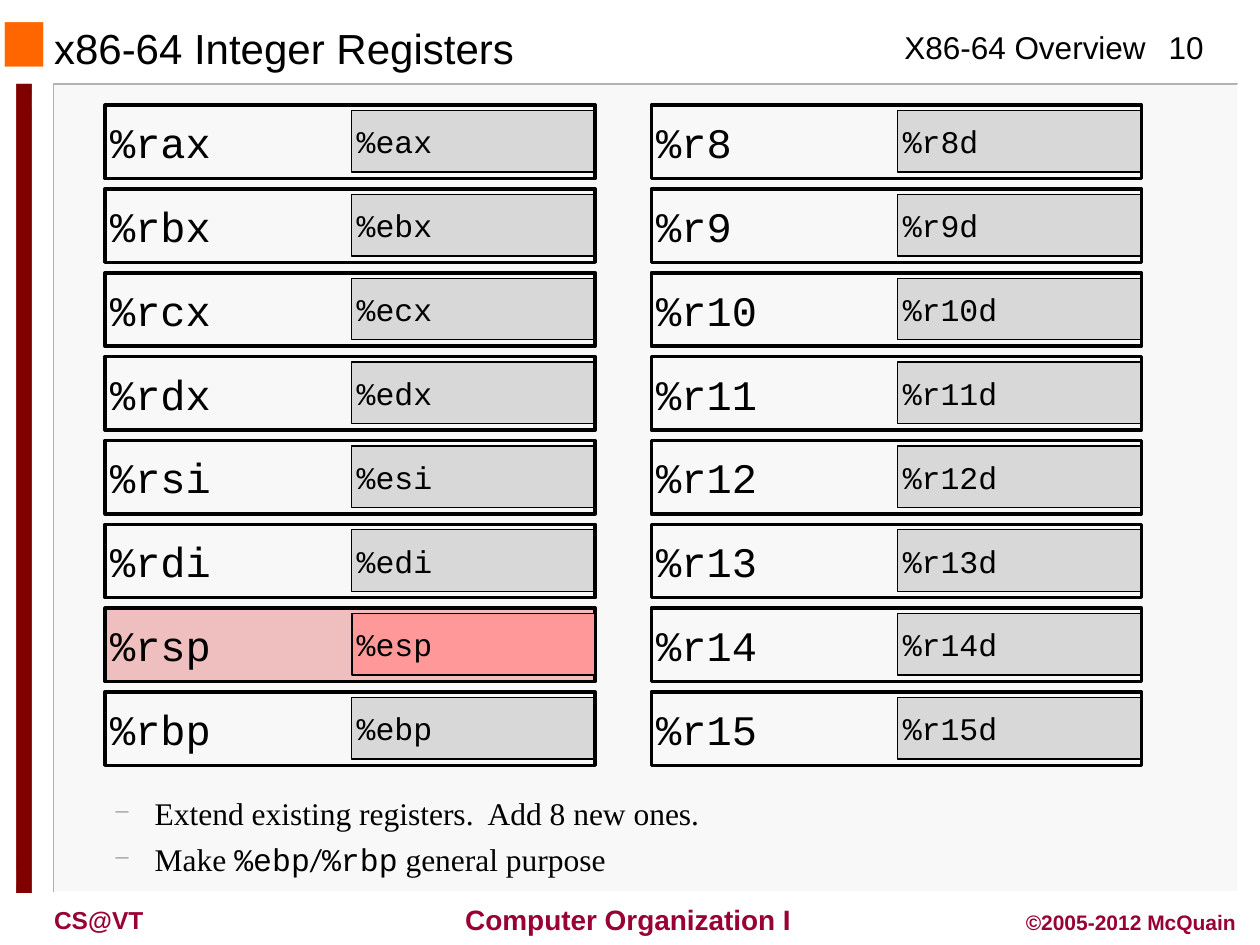
from dataclasses import dataclass

from lxml import etree
from pptx import Presentation
from pptx.dml.color import RGBColor
from pptx.enum.shapes import MSO_SHAPE
from pptx.enum.text import MSO_ANCHOR, PP_ALIGN
from pptx.oxml.ns import qn
from pptx.util import Cm, Pt

RECTANGLE = MSO_SHAPE.RECTANGLE
TOP, MIDDLE = MSO_ANCHOR.TOP, MSO_ANCHOR.MIDDLE
LEFT, CENTER, RIGHT = PP_ALIGN.LEFT, PP_ALIGN.CENTER, PP_ALIGN.RIGHT


@dataclass(frozen=True)
class Theme:
    # Colours
    ink: str = "000000"
    panel: str = "F8F8F8"
    rule: str = "B2B2B2"
    white: str = "FFFFFF"
    orange: str = "FF6600"
    maroon: str = "800000"
    footer: str = "990033"
    half: str = "D8D8D8"
    pointer: str = "EFBFBF"
    pointer_half: str = "FF9999"
    # Fonts
    sans: str = "Arial"
    serif: str = "Times New Roman"
    mono: str = "Courier New"
    slash: str = "Calibri"
    # Type sizes
    large: int = 24
    body: int = 18
    course: int = 16
    school: int = 14
    small: int = 12


THEME = Theme()

# Register grid, in cm
GRID_LEFT, GRID_TOP = 2.12, 2.12
COLUMN_STEP, ROW_STEP = 11.01, 1.69
FULL_SIZE = (9.88, 1.48)
HALF_OFFSET = (4.97, 0.11)
HALF_SIZE = (4.9, 1.24)
STACK_POINTER = "%rsp"
REGISTERS = [
    [("%rax", "%eax"), ("%rbx", "%ebx"), ("%rcx", "%ecx"), ("%rdx", "%edx"),
     ("%rsi", "%esi"), ("%rdi", "%edi"), ("%rsp", "%esp"), ("%rbp", "%ebp")],
    [(f"%r{n}", f"%r{n}d") for n in range(8, 16)],
]


def set_all(target, values):
    for name, value in values.items():
        setattr(target, name, value)


def paint(shape, fill=None, line=None, width=1):
    shape.shadow.inherit = False
    for part, colour in ((shape.fill, fill), (shape.line.fill, line)):
        if colour:
            part.solid()
            part.fore_color.rgb = RGBColor.from_string(colour)
        else:
            part.background()
    if line:
        shape.line.width = Pt(width)


def set_frame(frame, anchor=TOP, wrap=True, inset=(0.25, 0.13)):
    across, down = (Cm(value) for value in inset)
    set_all(frame, {"word_wrap": wrap, "vertical_anchor": anchor,
                    "margin_left": across, "margin_right": across,
                    "margin_top": down, "margin_bottom": down})


def add_run(paragraph, text, font, size, colour=THEME.ink, bold=False):
    run = paragraph.add_run()
    run.text = text
    set_all(run.font, {"name": font, "size": Pt(size), "bold": bold})
    run.font.color.rgb = RGBColor.from_string(colour)


def add_label(slide, box, text, size, colour=THEME.ink, bold=False,
              align=LEFT, **frame_format):
    label = slide.shapes.add_textbox(*(Cm(value) for value in box))
    set_frame(label.text_frame, **frame_format)
    paragraph = label.text_frame.paragraphs[0]
    paragraph.alignment = align
    add_run(paragraph, text, THEME.sans, size, colour, bold)


def add_rectangle(slide, box, **paint_format):
    rectangle = slide.shapes.add_shape(RECTANGLE, *(Cm(v) for v in box))
    paint(rectangle, **paint_format)
    return rectangle


def add_edge(slide, points, **paint_format):
    start, *rest = [(Cm(x), Cm(y)) for x, y in points]
    builder = slide.shapes.build_freeform(*start)
    builder.add_line_segments(rest, close=False)
    paint(builder.convert_to_shape(), **paint_format)


def add_bevelled(slide, box, fill, upper, lower):
    """A rectangle with an upper-left and a lower-right edge."""
    left, top, width, height = box
    right, bottom = left + width, top + height
    add_rectangle(slide, box, fill=fill)
    add_edge(slide, [(right, top), (left, top), (left, bottom)], **upper)
    add_edge(slide, [(right, top), (right, bottom), (left, bottom)], **lower)


def add_register(slide, box, name, size, **paint_format):
    register = add_rectangle(slide, box, **paint_format)
    set_frame(register.text_frame, anchor=MIDDLE, inset=(0.1, 0.1))
    paragraph = register.text_frame.paragraphs[0]
    paragraph.alignment = LEFT
    add_run(paragraph, name, THEME.mono, size)


def add_registers(slide):
    halves, fulls = [], []
    for column, pairs in enumerate(REGISTERS):
        for row, (full, half) in enumerate(pairs):
            x = GRID_LEFT + column * COLUMN_STEP
            y = GRID_TOP + row * ROW_STEP
            fulls.append(((x, y, *FULL_SIZE), full))
            half_box = (x + HALF_OFFSET[0], y + HALF_OFFSET[1], *HALF_SIZE)
            halves.append((half_box, half, full == STACK_POINTER))

    def add_full(box, name, fill=None):
        add_register(slide, box, name, THEME.large,
                     fill=fill, line=THEME.ink, width=2)

    # The filled stack pointer lies below its half; open frames lie on top
    for box, name in fulls:
        if name == STACK_POINTER:
            add_full(box, name, THEME.pointer)
    for box, name, is_pointer in halves:
        add_register(slide, box, name, THEME.body, line=THEME.ink,
                     fill=THEME.pointer_half if is_pointer else THEME.half,
                     width=1 if is_pointer else 0.75)
    for box, name in fulls:
        if name != STACK_POINTER:
            add_full(box, name)


def add_dash_bullet(paragraph):
    properties = paragraph._p.get_or_add_pPr()
    properties.set("marL", str(Cm(2.06)))
    properties.set("indent", str(Cm(-0.79)))
    colour = etree.SubElement(properties, qn("a:buClr"))
    etree.SubElement(colour, qn("a:srgbClr"), val=THEME.rule)
    etree.SubElement(properties, qn("a:buSzPct"), val="75000")
    etree.SubElement(properties, qn("a:buChar"), char="–")


def add_notes_list(slide, box, points):
    remarks = slide.shapes.add_textbox(*(Cm(value) for value in box))
    frame = remarks.text_frame
    set_frame(frame)
    for index, pieces in enumerate(points):
        paragraph = frame.add_paragraph() if index else frame.paragraphs[0]
        paragraph.level = 1
        paragraph.space_before = Pt(4.4 if index else 0)
        add_dash_bullet(paragraph)
        for text, font in pieces:
            add_run(paragraph, text, font, THEME.body)


def main():
    deck = Presentation()
    set_all(deck, {"slide_width": Cm(25.4), "slide_height": Cm(19.05)})
    slide = deck.slides.add_slide(deck.slide_layouts[6])

    # Content panel, title mark and side bar
    add_bevelled(slide, (1.08, 1.7, 23.88, 16.28), THEME.panel,
                 {"line": THEME.rule}, {"line": THEME.white})
    for box, colour in (((0.1, 0.45, 0.77, 0.89), THEME.orange),
                        ((0.33, 1.69, 0.31, 16.31), THEME.maroon)):
        add_bevelled(slide, box, colour, {"fill": colour}, {"fill": colour})

    # Header
    add_label(slide, (17.98, 0.43, 5.46, 1.02), "X86-64 Overview",
              THEME.body, wrap=False)
    add_label(slide, (23.06, 0.43, 1.7, 1.02), "10", THEME.body, align=CENTER)
    add_label(slide, (0.84, 0.48, 16.08, 0.97), "x86-64 Integer Registers",
              THEME.large, anchor=MIDDLE)

    # Footer
    footer = {"colour": THEME.footer, "bold": True}
    add_label(slide, (8.89, 18.06, 7.39, 0.94), " Computer Organization I",
              THEME.course, align=CENTER, anchor=MIDDLE, wrap=False, **footer)
    add_label(slide, (0.84, 18.11, 3.81, 0.84), "CS@VT",
              THEME.school, **footer)
    add_label(slide, (19.89, 18.21, 5.28, 0.76), "©2005-2012 McQuain",
              THEME.small, align=RIGHT, **footer)

    # Registers and remarks
    add_registers(slide)
    add_notes_list(slide, (0.81, 15.88, 20.37, 2.34), [
        [("Extend existing registers.  Add 8 new ones.", THEME.serif)],
        [("Make ", THEME.serif), ("%ebp", THEME.mono), ("/", THEME.slash),
         ("%rbp", THEME.mono), (" general purpose", THEME.serif)],
    ])

    deck.save("out.pptx")


if __name__ == "__main__":
    main()
